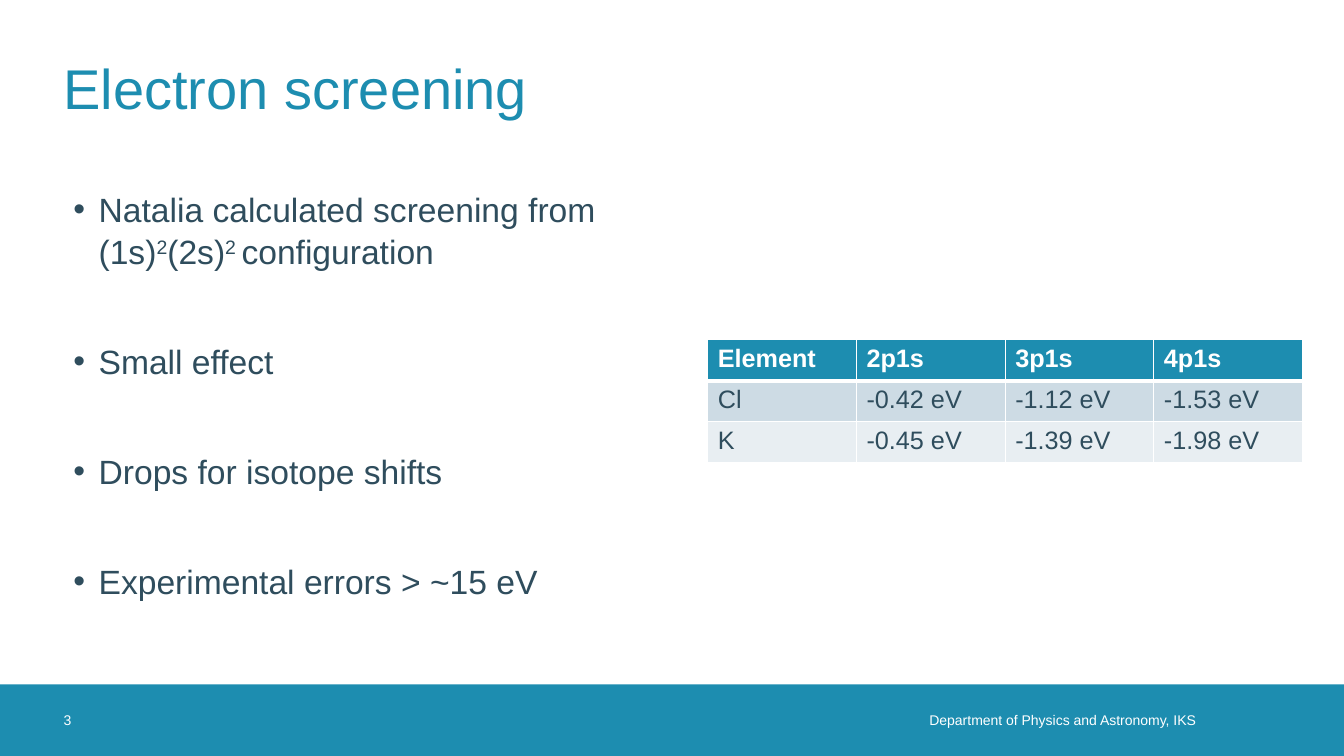
from dataclasses import dataclass
from itertools import product

from lxml.etree import SubElement
from pptx import Presentation
from pptx.dml.color import RGBColor
from pptx.enum.shapes import MSO_SHAPE as Preset
from pptx.enum.text import MSO_ANCHOR as Anchor, PP_ALIGN as Align
from pptx.oxml.ns import qn
from pptx.util import Inches, Pt

COLORS = {
    "teal": "1D8DB0",
    "slate": "2F4D5D",
    "white": "FFFFFF",
    "band": "CDDBE4",
    "pale": "E8EEF2",
}
FONT = "Arial"


@dataclass
class FooterText:
    text: str
    left: float
    width: float
    align: Align
    right_inset: float


@dataclass
class Span:
    text: str
    raised: bool = False


FOOTER_TOP, FOOTER_HEIGHT = 6.79, 0.71
FOOTERS = [
    FooterText("Department of Physics and Astronomy, IKS", 6.6, 5.46, Align.RIGHT, 0.2),
    FooterText("3", 0.63, 0.71, Align.LEFT, 0),
]
BULLETS = [
    [
        Span("Natalia calculated screening from (1s)"),
        Span("2", raised=True),
        Span("(2s)"),
        Span("2 ", raised=True),
        Span("configuration"),
    ],
    [Span("Small effect")],
    [Span("Drops for isotope shifts")],
    [Span("Experimental errors > ~15 eV")],
]
SHIFTS = [
    ["Element", "2p1s", "3p1s", "4p1s"],
    ["Cl", "-0.42 eV", "-1.12 eV", "-1.53 eV"],
    ["K", "-0.45 eV", "-1.39 eV", "-1.98 eV"],
]
ROW_FILLS = ["teal", "band", "pale"]


def color(name: str) -> RGBColor:
    return RGBColor.from_string(COLORS[name])


def add_span(para, text: str, *, size: float, ink: str, bold: bool = False,
             raised: bool = False) -> None:
    span = para.add_run()
    span.text = text
    span.font.name = FONT
    span.font.size = Pt(size)
    span.font.bold = bold
    span.font.color.rgb = color(ink)
    if raised:
        span.font._element.set("baseline", "30000")


def set_frame(frame, *, anchor: Anchor, right_inset: float = 0) -> None:
    frame.word_wrap = True
    frame.vertical_anchor = anchor
    frame.margin_left = frame.margin_top = frame.margin_bottom = 0
    frame.margin_right = Inches(right_inset)


def add_footer(page) -> None:
    band = page.shapes.add_shape(Preset.RECTANGLE, 0, Inches(FOOTER_TOP),
                                 Inches(13.33), Inches(FOOTER_HEIGHT))
    band.shadow.inherit = False
    band.fill.solid()
    band.fill.fore_color.rgb = color("teal")
    band.line.fill.background()
    for footer in FOOTERS:
        box = page.shapes.add_textbox(Inches(footer.left), Inches(FOOTER_TOP),
                                      Inches(footer.width), Inches(FOOTER_HEIGHT))
        set_frame(box.text_frame, anchor=Anchor.MIDDLE, right_inset=footer.right_inset)
        para = box.text_frame.paragraphs[0]
        para.alignment = footer.align
        add_span(para, footer.text, size=10, ink="white")


def set_title(page, text: str) -> None:
    title = page.shapes.title
    title.left, title.top = Inches(0.63), Inches(0.23)
    title.width, title.height = Inches(12.07), Inches(1.26)
    set_frame(title.text_frame, anchor=Anchor.MIDDLE)
    para = title.text_frame.paragraphs[0]
    para.alignment = Align.LEFT
    add_span(para, text, size=40, ink="teal")


def add_bullets(page) -> None:
    box = page.shapes.add_textbox(Inches(0.63), Inches(1.81), Inches(5.91), Inches(4.88))
    frame = box.text_frame
    frame.word_wrap = True
    for index, spans in enumerate(BULLETS):
        para = frame.add_paragraph() if index else frame.paragraphs[0]
        para.line_spacing = 1.04
        if index:
            para.space_before = Pt(48.7)
        properties = para._p.get_or_add_pPr()
        properties.set("marL", str(Inches(0.25)))
        properties.set("indent", str(Inches(-0.25)))
        SubElement(properties, qn("a:buFont"), typeface=FONT)
        SubElement(properties, qn("a:buChar"), char="•")
        for span in spans:
            add_span(para, span.text, size=24, ink="slate", raised=span.raised)


def set_borders(cell, widths: dict[str, float]) -> None:
    properties = cell._tc.get_or_add_tcPr()
    for position, (side, width) in enumerate(widths.items()):
        line = SubElement(properties, qn(f"a:{side}"), w=str(Pt(width)))
        fill = SubElement(line, qn("a:solidFill"))
        SubElement(fill, qn("a:srgbClr"), val=COLORS["white"])
        properties.insert(position, line)


def add_shift_table(page) -> None:
    rows, columns = len(SHIFTS), len(SHIFTS[0])
    table = page.shapes.add_table(rows, columns, Inches(7.02), Inches(3.37),
                                  Inches(5.9), Inches(1.22)).table
    for row, column in product(range(rows), range(columns)):
        header = row == 0
        cell = table.cell(row, column)
        cell.fill.solid()
        cell.fill.fore_color.rgb = color(ROW_FILLS[row])
        set_borders(cell, {"lnL": 1, "lnR": 1, "lnT": 3 if row == 1 else 1,
                           "lnB": 3 if header else 1})
        add_span(cell.text_frame.paragraphs[0], SHIFTS[row][column], size=18,
                 ink="white" if header else "slate", bold=header)


def main() -> None:
    deck = Presentation()
    deck.slide_width, deck.slide_height = Inches(13.33), Inches(7.5)
    page = deck.slides.add_slide(deck.slide_layouts.get_by_name("Title Only"))
    add_footer(page)
    set_title(page, "Electron screening")
    add_bullets(page)
    add_shift_table(page)
    deck.save("out.pptx")


if __name__ == "__main__":
    main()
